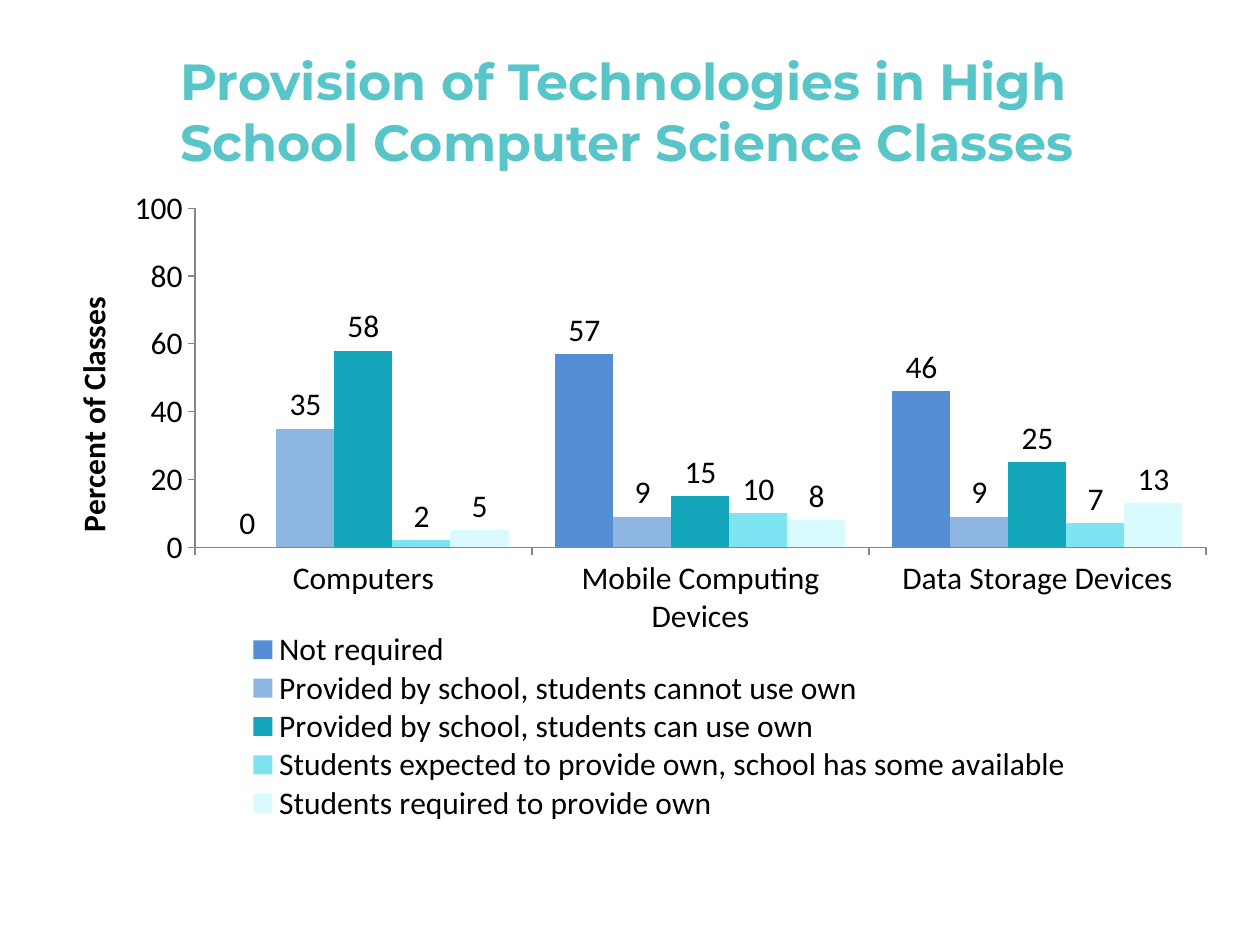
"""Build a slide charting how technologies are provided in high school computer science classes."""
import dataclasses

import lxml.etree
import pptx
import pptx.chart.data
import pptx.dml.color
import pptx.enum.chart
import pptx.enum.text
import pptx.oxml.ns
import pptx.oxml.xmlchemy
import pptx.util
from pptx.util import Cm


@dataclasses.dataclass(frozen=True)
class Theme:
    heading: str = "58C5C9"
    text: str = "000000"
    axis: str = "868686"
    heading_font: str = "Montserrat"
    body_font: str = "Calibri"
    heading_size: float = 29
    body_size: float = 18


theme = Theme()


def write(frame, text, *, font, size, color, bold=False):
    frame.text = text
    style = frame.paragraphs[0].runs[0].font
    style.name = font
    style.size = pptx.util.Pt(size)
    style.bold = bold
    style.color.rgb = pptx.dml.color.RGBColor.from_string(color)


def place(element, index, **positions):
    for old in element.findall(pptx.oxml.ns.qn("c:layout")):
        element.remove(old)
    layout = pptx.oxml.xmlchemy.OxmlElement("c:layout")
    manual = lxml.etree.SubElement(layout, pptx.oxml.ns.qn("c:manualLayout"))
    for tag, value in positions.items():
        lxml.etree.SubElement(manual, pptx.oxml.ns.qn(f"c:{tag}")).set("val", str(value))
    element.insert(index, layout)


presentation = pptx.Presentation()
presentation.slide_width = Cm(25.4)
presentation.slide_height = Cm(19.05)
slide = presentation.slides.add_slide(presentation.slide_layouts[6])

responses = [
    ("Not required", "558ED5", (0, 57, 46)),
    ("Provided by school, students cannot use own", "8EB6E3", (35, 9, 9)),
    ("Provided by school, students can use own", "13A6BA", (58, 15, 25)),
    ("Students expected to provide own, school has some available", "7FE4F2", (2, 10, 7)),
    ("Students required to provide own", "D9FBFF", (5, 8, 13)),
]
provision = pptx.chart.data.CategoryChartData(number_format="#,##0")
provision.categories = ["Computers", "Mobile Computing Devices", "Data Storage Devices"]
for response, _, percents in responses:
    provision.add_series(response, percents)

chart = slide.shapes.add_chart(
    pptx.enum.chart.XL_CHART_TYPE.COLUMN_CLUSTERED,
    Cm(0.85), Cm(3.81), Cm(23.7), Cm(12.9), provision,
).chart
chart.has_title = False
chart.font.name = theme.body_font
chart.font.size = pptx.util.Pt(theme.body_size)
chart.font.color.rgb = pptx.dml.color.RGBColor.from_string(theme.text)

columns = chart.plots[0]
columns.gap_width = 81
columns.overlap = 0
columns.vary_by_categories = False
for series, (_, color, _) in zip(columns.series, responses):
    series.format.fill.solid()
    series.format.fill.fore_color.rgb = pptx.dml.color.RGBColor.from_string(color)
    series.invert_if_negative = False
    labels = series.data_labels
    labels.show_value = True
    labels.number_format = "#,##0"
    labels.number_format_is_linked = False
    labels.position = pptx.enum.chart.XL_LABEL_POSITION.OUTSIDE_END

devices, percent = chart.category_axis, chart.value_axis
for axis in (devices, percent):
    axis.has_major_gridlines = False
    axis.major_tick_mark = pptx.enum.chart.XL_TICK_MARK.OUTSIDE
    axis.minor_tick_mark = pptx.enum.chart.XL_TICK_MARK.NONE
    axis.format.line.color.rgb = pptx.dml.color.RGBColor.from_string(theme.axis)
    axis.format.line.width = pptx.util.Pt(0.75)
percent.minimum_scale = 0
percent.maximum_scale = 100
percent.major_unit = 20
percent.tick_labels.number_format = "#,##0"
percent.tick_labels.number_format_is_linked = False
write(percent.axis_title.text_frame, "Percent of Classes",
      font=theme.body_font, size=theme.body_size, color=theme.text, bold=True)

chart.has_legend = True
chart.legend.position = pptx.enum.chart.XL_LEGEND_POSITION.BOTTOM
chart.legend.include_in_layout = False

plot_area = chart.element.xpath("c:chart/c:plotArea")[0]
axis_title = chart.element.xpath("c:chart/c:plotArea/c:valAx/c:title")[0]
legend = chart.element.xpath("c:chart/c:legend")[0]
place(plot_area, 0, layoutTarget="inner", xMode="edge", yMode="edge",
      x=0.13, y=0.03, w=0.86, h=0.53)
place(axis_title, 1, xMode="edge", yMode="edge", x=0.02, y=0.16)
place(legend, 1, xMode="edge", yMode="edge", x=0.15, y=0.69, w=0.75, h=0.3)

heading = slide.shapes.add_textbox(Cm(3.38), Cm(0.64), Cm(20.75), Cm(3.18)).text_frame
heading.word_wrap = True
heading.vertical_anchor = pptx.enum.text.MSO_ANCHOR.MIDDLE
write(heading, "Provision of Technologies in High School Computer Science Classes",
      font=theme.heading_font, size=theme.heading_size, color=theme.heading, bold=True)

presentation.save("out.pptx")
